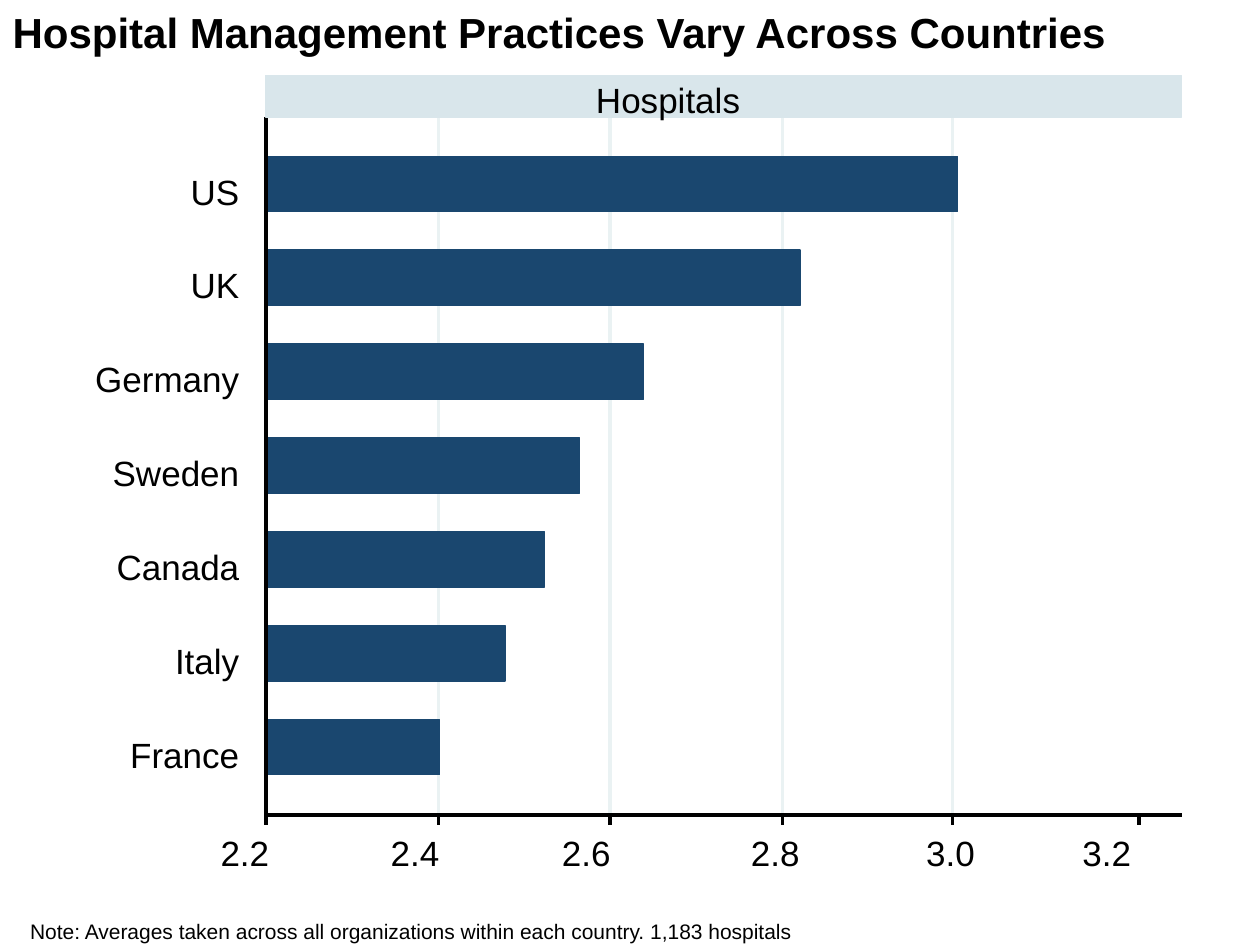
from pptx import Presentation
from pptx.dml.color import RGBColor
from pptx.enum.shapes import MSO_CONNECTOR as Conn, MSO_SHAPE as Kind
from pptx.enum.text import MSO_ANCHOR as Anchor, MSO_AUTO_SIZE as Fit, PP_ALIGN as Align
from pptx.oxml.ns import qn
from pptx.util import Inches, Pt
from lxml.etree import SubElement

TITLE = "Hospital Management Practices Vary Across Countries"
HEAD = "Hospitals"
NOTE = "Note: Averages taken across all organizations within each country. 1,183 hospitals"
BARS = [
    ("US", 5.49),
    ("UK", 4.24),
    ("Germany", 3),
    ("Sweden", 2.49),
    ("Canada", 2.21),
    ("Italy", 1.9),
    ("France", 1.38),
]
TICKS = [
    ("2.2", 2.11, 1.75),
    ("2.4", 3.48, 3.1),
    ("2.6", 4.84, 4.46),
    ("2.8", 6.21, 5.96),
    ("3.0", 7.56, 7.35),
    ("3.2", 9.04, 8.59),
]

BLACK = RGBColor(0, 0, 0)
WHITE = RGBColor(255, 255, 255)
NAVY = RGBColor(0x1A, 0x47, 0x6F)
PALE = RGBColor(0xD9, 0xE6, 0xEB)
GRID = RGBColor(0xEA, 0xF2, 0xF3)

WIDE, HIGH = 10, 7.5
LEFT, TOP, SPAN, BASE = 2.11, 0.93, 7.27, 6.47
BAND = 0.33
FIRST, STEP, THICK = 1.24, 0.745, 0.44
ROW = 0.34

deck = Presentation()
deck.slide_width, deck.slide_height = Inches(WIDE), Inches(HIGH)
slide = deck.slides.add_slide(deck.slide_layouts[5])


def write(text, x, y, w, h, box=None, size=20, bold=False, align=Align.LEFT, pad=(0, 0, 0, 0)):
    box = box or slide.shapes.add_textbox(0, 0, 0, 0)
    box.left, box.top, box.width, box.height = map(Inches, (x, y, w, h))
    frame = box.text_frame
    frame.word_wrap = True
    frame.auto_size = Fit.NONE
    frame.vertical_anchor = Anchor.TOP
    frame.margin_left, frame.margin_top, frame.margin_right, frame.margin_bottom = map(Inches, pad)
    para = frame.paragraphs[0]
    para.alignment = align
    run = para.add_run()
    run.text = text
    font = run.font
    font.name, font.size, font.bold = "Arial", Pt(size), bold
    font.color.rgb = BLACK


def block(x, y, w, h, color):
    rect = slide.shapes.add_shape(Kind.RECTANGLE, *map(Inches, (x, y, w, h)))
    rect.shadow.inherit = False
    rect.fill.solid()
    rect.fill.fore_color.rgb = color
    rect.line.color.rgb = color
    rect.line.width = 0


def rule(x, y, to_x, to_y, color=BLACK):
    line = slide.shapes.add_connector(Conn.STRAIGHT, *map(Inches, (x, y, to_x, to_y)))
    line.line.color.rgb = color
    line.line.width = 0
    SubElement(line._element.spPr, qn("a:effectLst"))


write(TITLE, 0.1, 0, WIDE - 0.1, 0.51, box=slide.shapes.title, size=24, bold=True,
      pad=(0, 0.05, 0.1, 0.05))

block(LEFT, TOP, SPAN, BASE - TOP, WHITE)
for _, x, _ in TICKS[1:-1]:
    rule(x, BASE, x, TOP, GRID)

for i, (name, size) in enumerate(BARS):
    y = FIRST + i * STEP
    block(LEFT, y, size, THICK, NAVY)
    write(name, 0.4, y + 0.11, 1.5, ROW, align=Align.RIGHT)

rule(LEFT, BASE, LEFT + SPAN, BASE)
rule(LEFT, BASE, LEFT, TOP)
for mark, x, text_x in TICKS:
    rule(x, BASE, x, BASE + 0.08)
    write(mark, text_x, 6.6, 0.82, ROW)

block(LEFT, TOP - BAND, SPAN, BAND, PALE)
write(HEAD, 4.73, 0.62, 2.45, ROW)
write(NOTE, 0.14, 7.24, 9.59, 0.31, size=12, pad=(0.1, 0.05, 0.1, 0.05))

deck.save("out.pptx")
